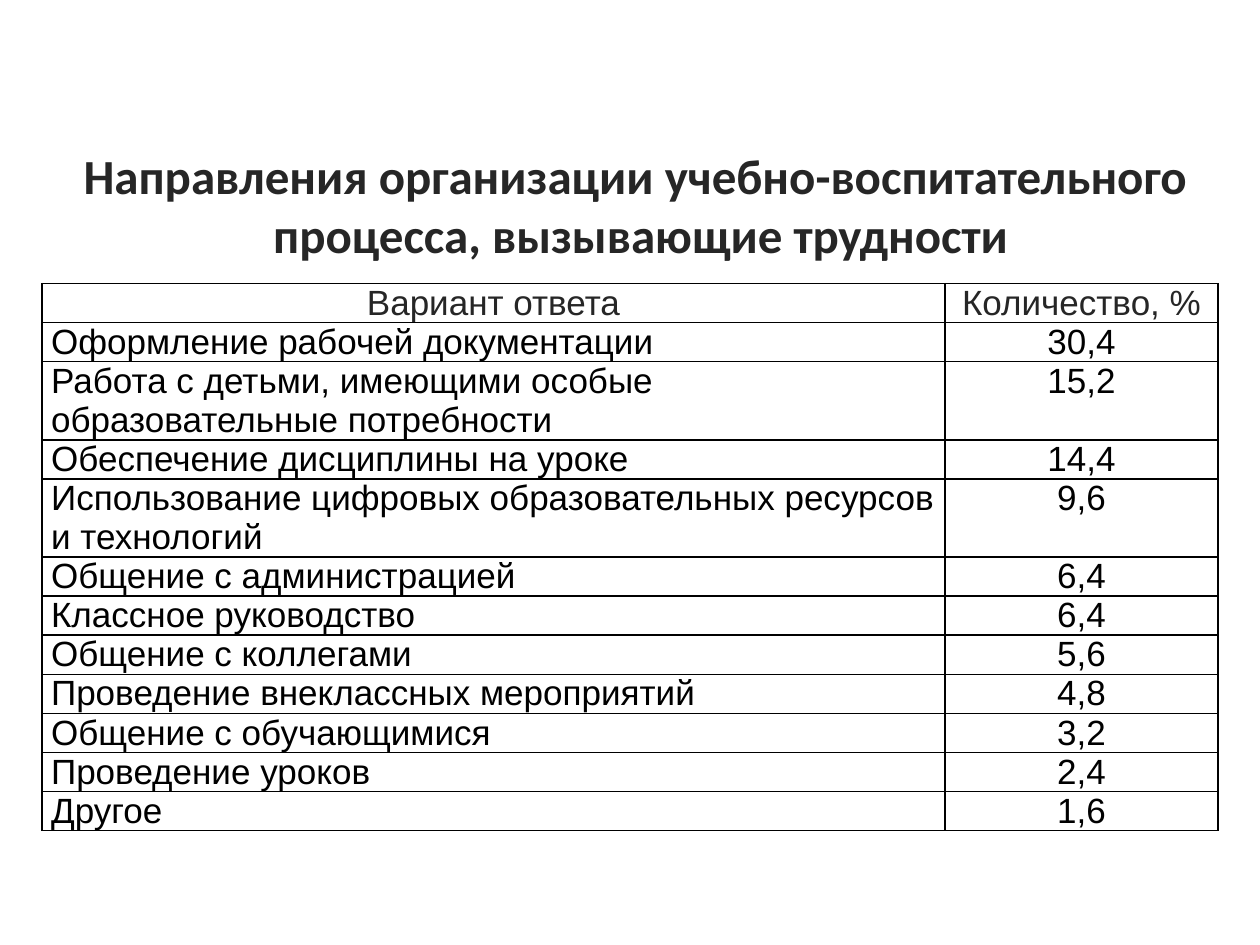
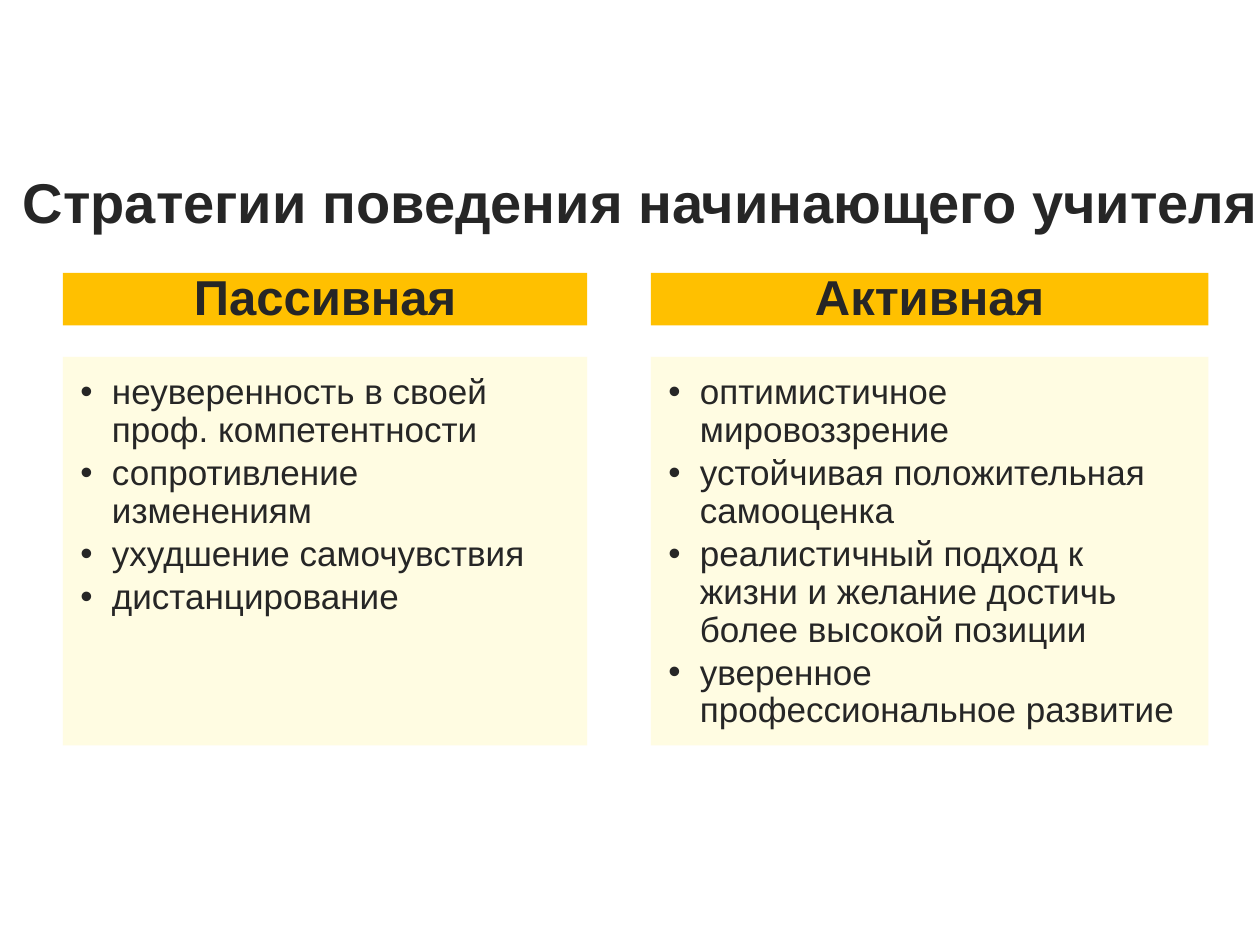
"""Build two slides on the difficulties and strategies of beginning teachers."""
from lxml.etree import SubElement
from pptx import Presentation
from pptx.dml.color import RGBColor
from pptx.enum.shapes import MSO_SHAPE
from pptx.enum.text import MSO_ANCHOR, PP_ALIGN
from pptx.oxml.ns import qn
from pptx.util import Pt

BLACK = RGBColor(0x00, 0x00, 0x00)
CHARCOAL = RGBColor(0x26, 0x26, 0x26)
AMBER = RGBColor(0xFF, 0xC0, 0x00)
CREAM = RGBColor(0xFF, 0xFC, 0xDF)

BODY = {"size": Pt(20), "name": "Arial", "bold": False}
HEADING = {"size": Pt(28), "name": "Arial", "bold": True}
TABLE_TITLE = {"size": Pt(28), "name": "Calibri", "bold": True}
STRATEGY_TITLE = {"size": Pt(32), "name": "Arial", "bold": True}


def write_text(text_frame, lines, font_format, alignment=PP_ALIGN.LEFT, color=CHARCOAL,
               line_spacing=None, bulleted=False):
    text_frame.text = "\n".join(lines)
    for paragraph in text_frame.paragraphs:
        paragraph.alignment = alignment
        paragraph.line_spacing = line_spacing
        if bulleted:
            paragraph.level = 1
            paragraph.space_after = Pt(3)
            properties = paragraph._p.get_or_add_pPr()
            properties.set("marL", str(Pt(18)))
            properties.set("indent", str(-Pt(18)))
            SubElement(properties, qn("a:buFont"), typeface="Arial")
            SubElement(properties, qn("a:buChar"), char="•")
        for attribute, value in font_format.items():
            setattr(paragraph.font, attribute, value)
        paragraph.font.color.rgb = color


def add_box(slide, preset, left, top, width, height, fill_color=None, margins=(7.2, 3.6, 7.2, 3.6),
            anchor=MSO_ANCHOR.MIDDLE):
    shape = slide.shapes.add_shape(preset, Pt(left), Pt(top), Pt(width), Pt(height))
    shape.shadow.inherit = False
    shape.line.fill.background()
    if preset == MSO_SHAPE.ROUNDED_RECTANGLE:
        shape.adjustments[0] = 0
    if fill_color is None:
        shape.fill.background()
    else:
        shape.fill.solid()
        shape.fill.fore_color.rgb = fill_color
    text_frame = shape.text_frame
    text_frame.word_wrap = fill_color is not None
    text_frame.vertical_anchor = anchor
    for side, margin in zip(("left", "top", "right", "bottom"), margins):
        setattr(text_frame, f"margin_{side}", Pt(margin))
    return shape


presentation = Presentation()
presentation.slide_width, presentation.slide_height = Pt(720), Pt(540)
blank_layout = presentation.slide_layouts[6]

slide = presentation.slides.add_slide(blank_layout)
title = add_box(slide, MSO_SHAPE.ROUNDED_RECTANGLE, 30, 90, 672, 54)
title_lines = ["Направления организации учебно-воспитательного ", "процесса, вызывающие трудности"]
write_text(title.text_frame, title_lines, TABLE_TITLE, PP_ALIGN.CENTER)

answers = [
    ("Вариант ответа", "Количество, %"),
    ("Оформление рабочей документации", "30,4"),
    ("Работа с детьми, имеющими особые образовательные потребности", "15,2"),
    ("Обеспечение дисциплины на уроке", "14,4"),
    ("Использование цифровых образовательных ресурсов и технологий", "9,6"),
    ("Общение с администрацией", "6,4"),
    ("Классное руководство", "6,4"),
    ("Общение с коллегами", "5,6"),
    ("Проведение внеклассных мероприятий", "4,8"),
    ("Общение с обучающимися", "3,2"),
    ("Проведение уроков", "2,4"),
    ("Другое", "1,6"),
]
table = slide.shapes.add_table(len(answers), 2, Pt(24), Pt(162), Pt(672), Pt(336)).table
table.first_row = table.horz_banding = False
for column, width in zip(table.columns, (516, 156)):
    column.width = Pt(width)
for row_index, answer in enumerate(answers):
    table.rows[row_index].height = Pt(19)
    for column_index, text in enumerate(answer):
        cell = table.cell(row_index, column_index)
        cell.margin_left = cell.margin_right = Pt(5.2)
        cell.margin_top = cell.margin_bottom = 0
        centered = row_index == 0 or column_index == 1
        write_text(cell.text_frame, [text], BODY, PP_ALIGN.CENTER if centered else PP_ALIGN.LEFT,
                   CHARCOAL if row_index == 0 else BLACK)
        cell_properties = cell._tc.get_or_add_tcPr()
        for side in ("L", "R", "T", "B"):
            border = SubElement(cell_properties, qn(f"a:ln{side}"), w=str(Pt(1)))
            border_fill = SubElement(border, qn("a:solidFill"))
            SubElement(border_fill, qn("a:srgbClr"), val=str(BLACK))
        cell.fill.background()

slide = presentation.slides.add_slide(blank_layout)
title = add_box(slide, MSO_SHAPE.ROUNDED_RECTANGLE, 6, 90, 672, 50)
write_text(title.text_frame, ["Стратегии поведения начинающего учителя"], STRATEGY_TITLE)

strategies = [
    (36, 299.5, "Пассивная", [
        "неуверенность в своей проф. компетентности",
        "сопротивление изменениям",
        "ухудшение самочувствия",
        "дистанцирование",
    ]),
    (372, 318.5, "Активная", [
        "оптимистичное мировоззрение",
        "устойчивая положительная самооценка",
        "реалистичный подход к жизни и желание достичь более высокой позиции",
        "уверенное профессиональное развитие",
    ]),
]
for left, width, name, traits in strategies:
    heading = add_box(slide, MSO_SHAPE.RECTANGLE, left, 156, width, 30, AMBER, (16, 8.5, 16, 8.5))
    write_text(heading.text_frame, [name], HEADING, PP_ALIGN.CENTER, line_spacing=0.9)
    panel = add_box(slide, MSO_SHAPE.RECTANGLE, left, 204, width, 222, CREAM, (10, 10, 13.5, 15),
                    MSO_ANCHOR.TOP)
    panel_color = panel._element.spPr.find(qn("a:solidFill")).find(qn("a:srgbClr"))
    SubElement(panel_color, qn("a:alpha"), val="90000")
    write_text(panel.text_frame, traits, BODY, line_spacing=0.9, bulleted=True)

presentation.save("out.pptx")
